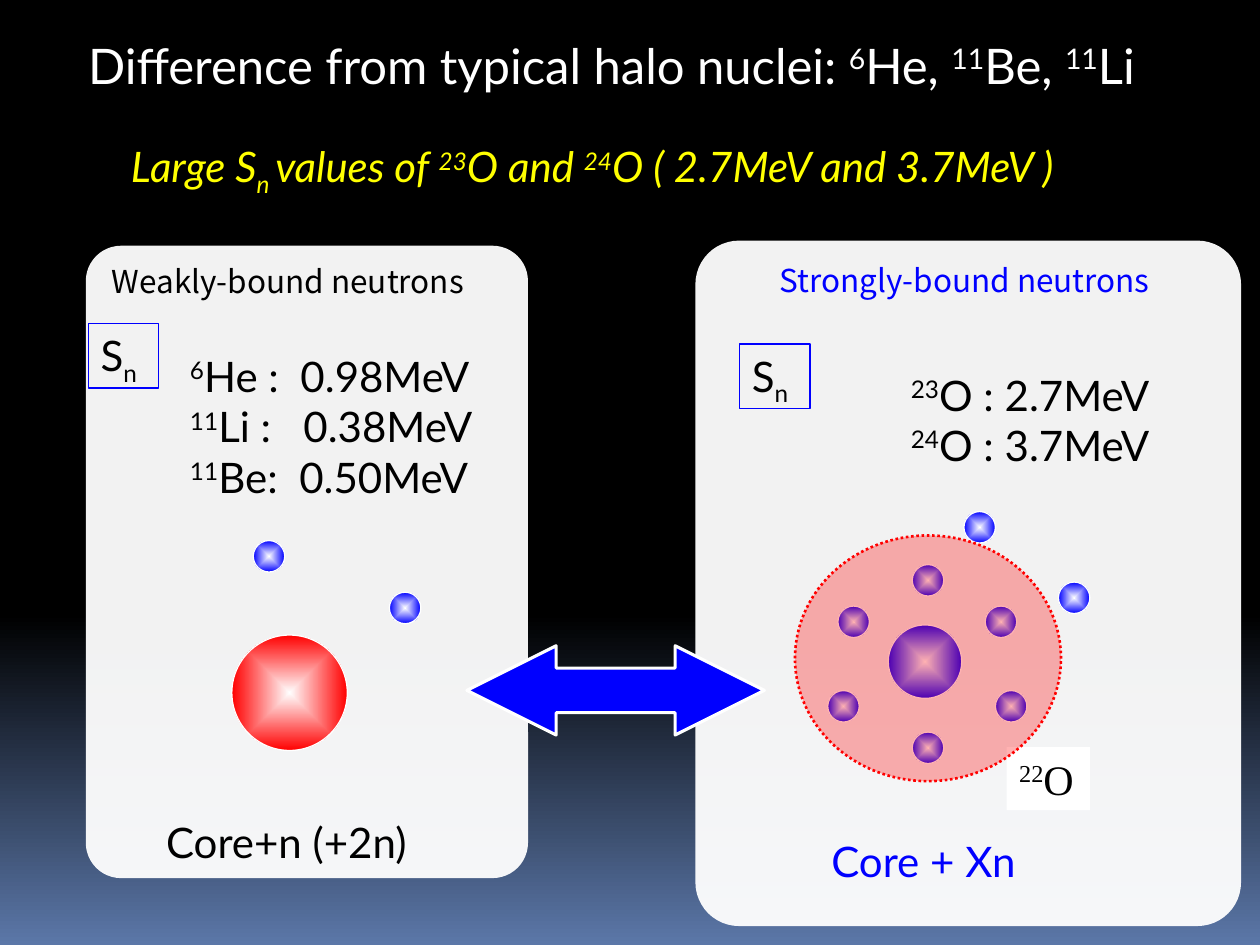
"""Build a slide comparing typical halo nuclei with strongly bound oxygen isotopes."""
from lxml.etree import SubElement
from pptx import Presentation
from pptx.dml.color import RGBColor
from pptx.enum.dml import MSO_LINE
from pptx.enum.shapes import MSO_SHAPE
from pptx.enum.text import MSO_ANCHOR, MSO_AUTO_SIZE, PP_ALIGN
from pptx.oxml import parse_xml
from pptx.oxml.ns import nsdecls, qn
from pptx.util import Pt

WHITE, BLACK, BLUE, RED, YELLOW = "FFFFFF", "000000", "0000FF", "FF0000", "FFFF00"
BODY = {"name": "Lato", "size": Pt(24)}
TITLE = {"name": "Lato", "size": Pt(28)}
HEADING = {"name": "Noto Sans CJK JP", "size": Pt(18)}
SERIF = {"name": "Times New Roman", "size": Pt(24)}
BASELINES = {"^": "30000", "_": "-25000"}

BACKGROUND = [(0, BLACK), (65, BLACK), (100, "5B77A8")]
TITLE_LINE = ["Difference from typical halo nuclei: |^6|He, |^11|Be, |^11|Li"]
TITLE_BOX = (43.2, 16.6, 627.1, 41)
PANELS = [(397.4, 137.5, 311.8, 391.7), (49, 140.4, 252.7, 361.4)]
TEXTS = [
    (["Large S|_n |values of |^23|O and |^24|O ( 2.7MeV and 3.7MeV )"],
     (67.7, 77, 604, 36), BODY | {"italic": True}, YELLOW),
    (["Weakly-bound neutrons"], (56.9, 146.2, 224.6, 29), HEADING, BLACK),
    (["Strongly-bound neutrons"], (438.5, 145.4, 234.7, 29), HEADING, BLUE),
    (["^6|He :  0.98MeV", "^11|Li :   0.38MeV", "^11|Be:  0.50MeV"],
     (101.5, 196.6, 180, 93.6), BODY, BLACK),
    (["^23|O : 2.7MeV", "^24|O : 3.7MeV"], (513.4, 207.4, 153.4, 64.8), BODY, BLACK),
    (["Core+n (+2n)"], (87.8, 463, 164.2, 36), BODY, BLACK),
    (["Core + Xn"], (468, 473.8, 124.6, 36), BODY, BLUE),
]
ENERGY_LABELS = [(50.4, 185), (422.6, 196.6)]
ARROW = (266.8, 369, 170, 51)
CORES = [(132.5, 362.9, 66, RED), (507.6, 357.1, 42, BLUE)]
VALENCE_NEUTRONS = [(222.5, 338.4), (144.7, 308.9), (604.8, 332.6), (550.8, 292.3)]
SHELL_NEUTRONS = [(521.3, 322.6), (563, 346.3), (568.8, 394.6),
                  (521.3, 418.3), (473, 394.6), (478.8, 346.3)]
NEUTRON_SIZE = 18
OXYGEN_LABEL = (575.3, 427, 47.5, 36)
OXYGEN_CORE = (454.3, 306, 152, 140.4)


def color(code):
    return RGBColor.from_string(code)


def apply_gradient(solid, stops, direction):
    stop_list = "".join(
        f'<a:gs pos="{at * 1000}"><a:srgbClr val="{code}"/></a:gs>' for at, code in stops)
    gradient = parse_xml(
        f'<a:gradFill {nsdecls("a")}><a:gsLst>{stop_list}</a:gsLst>{direction}</a:gradFill>')
    solid.getparent().replace(solid, gradient)


def write(shape, lines, font, code, wrap=False):
    frame = shape.text_frame
    layout = {"word_wrap": wrap, "auto_size": MSO_AUTO_SIZE.NONE,
              "vertical_anchor": MSO_ANCHOR.TOP}
    for key, value in layout.items():
        setattr(frame, key, value)
    for index, line in enumerate(lines):
        paragraph = frame.add_paragraph() if index else frame.paragraphs[0]
        paragraph.alignment = PP_ALIGN.LEFT
        for part in line.split("|"):
            baseline = BASELINES.get(part[0])
            run = paragraph.add_run()
            run.text = part[1:] if baseline else part
            for key, value in font.items():
                setattr(run.font, key, value)
            run.font.color.rgb = color(code)
            if baseline:
                run.font._element.set("baseline", baseline)


def add_shape(slide, kind, box, fill=None, line=None, width=0.75, alpha=None):
    shape = slide.shapes.add_shape(kind, *map(Pt, box))
    shape.shadow.inherit = False
    if fill:
        shape.fill.solid()
        shape.fill.fore_color.rgb = color(fill)
    else:
        shape.fill.background()
    if alpha:
        fill_color = shape.element.xpath("./p:spPr/a:solidFill/a:srgbClr")[0]
        SubElement(fill_color, qn("a:alpha")).set("val", str(alpha * 1000))
    if line:
        shape.line.color.rgb = color(line)
        shape.line.width = Pt(width)
    else:
        shape.line.fill.background()
    return shape


def add_sphere(slide, left, top, size, code):
    sphere = add_shape(slide, MSO_SHAPE.OVAL, (left, top, size, size), code, WHITE)
    center = ('<a:path path="shape"><a:fillToRect l="50000" t="50000" r="50000" b="50000"/>'
              '</a:path>')
    apply_gradient(sphere.element.xpath("./p:spPr/a:solidFill")[0],
                   [(0, WHITE), (100, code)], center)


def main():
    deck = Presentation()
    deck.slide_width, deck.slide_height = Pt(720), Pt(540)
    slide = deck.slides.add_slide(deck.slide_layouts[5])
    slide.background.fill.solid()
    apply_gradient(slide.element.xpath(".//p:bgPr/a:solidFill")[0], BACKGROUND,
                   '<a:lin ang="5400000" scaled="0"/>')

    title = slide.shapes.title
    for side, value in zip(("left", "top", "width", "height"), TITLE_BOX):
        setattr(title, side, Pt(value))
    write(title, TITLE_LINE, TITLE, WHITE)

    for box in PANELS:
        panel = add_shape(slide, MSO_SHAPE.ROUNDED_RECTANGLE, box, WHITE, alpha=95)
        panel.adjustments[0] = 0.08
    for lines, box, font, code in TEXTS:
        write(slide.shapes.add_textbox(*map(Pt, box)), lines, font, code)

    arrow = add_shape(slide, MSO_SHAPE.LEFT_RIGHT_ARROW, ARROW, BLUE, WHITE, 1.75)
    arrow.adjustments[0], arrow.adjustments[1] = 0.5, 1
    for core in CORES:
        add_sphere(slide, *core)
    for left, top in VALENCE_NEUTRONS + SHELL_NEUTRONS:
        add_sphere(slide, left, top, NEUTRON_SIZE, BLUE)

    write(add_shape(slide, MSO_SHAPE.RECTANGLE, OXYGEN_LABEL, WHITE), ["^22|O"], SERIF, BLACK)
    for left, top in ENERGY_LABELS:
        label = add_shape(slide, MSO_SHAPE.RECTANGLE, (left, top, 40.3, 36.7), line=BLUE)
        write(label, ["S|_n"], BODY, BLACK)
    oxygen_core = add_shape(slide, MSO_SHAPE.OVAL, OXYGEN_CORE, RED, RED, 1.5, alpha=30)
    oxygen_core.line.dash_style = MSO_LINE.ROUND_DOT
    deck.save("out.pptx")


if __name__ == "__main__":
    main()
